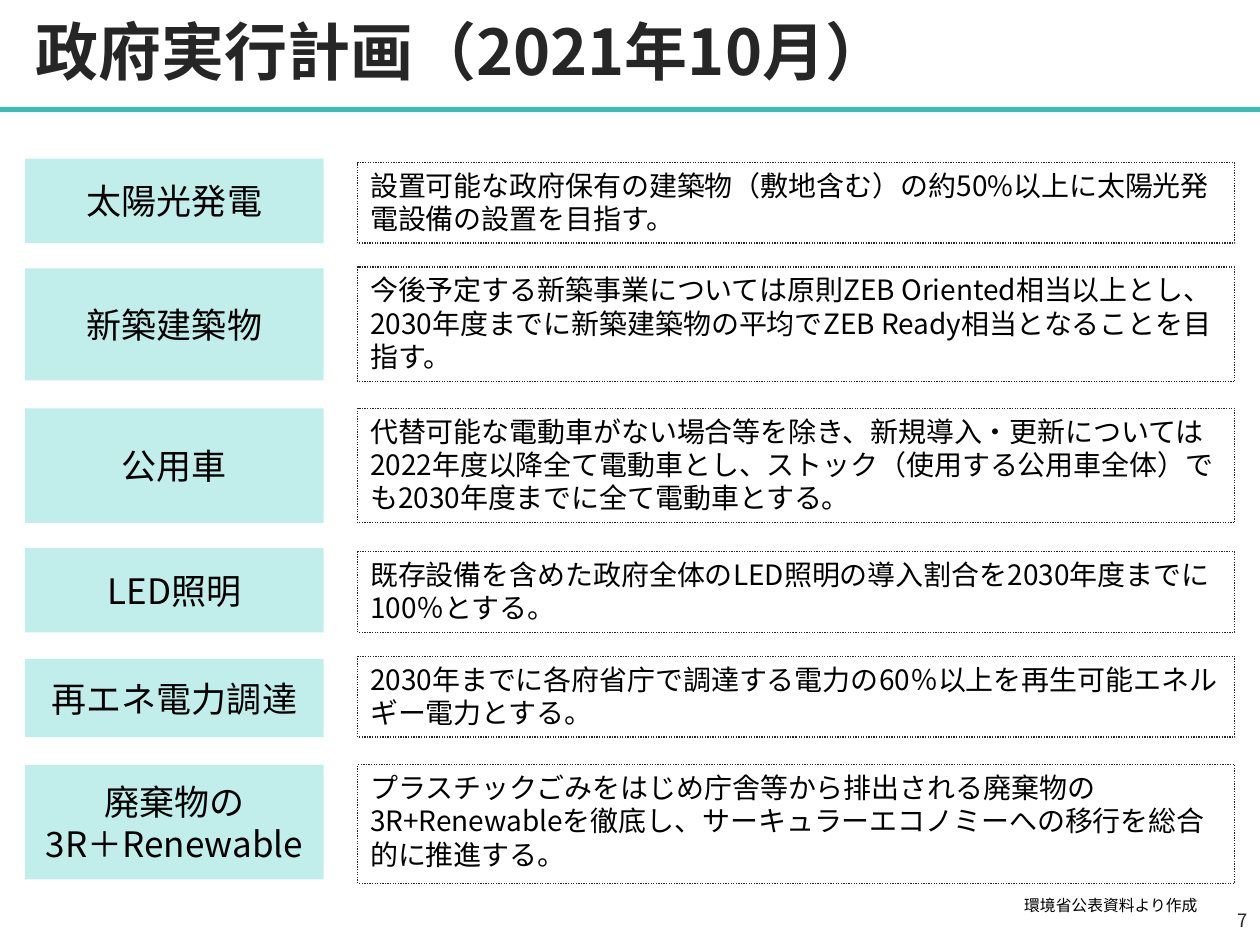
from lxml.etree import SubElement
from pptx import Presentation
from pptx.dml.color import RGBColor
from pptx.enum.dml import MSO_LINE
from pptx.enum.shapes import MSO_CONNECTOR, MSO_SHAPE
from pptx.enum.text import MSO_ANCHOR, MSO_AUTO_SIZE, PP_ALIGN
from pptx.oxml.ns import qn
from pptx.util import Emu, Pt

EMU_PER_PX = 9144
FONT = "Noto Sans CJK JP"
COLORS = {"teal": "37BFB9", "pale": "C1EDEB", "dark": "262626", "black": "000000"}
LABEL_LEFT, LABEL_WIDTH = 20, 237
TARGET_LEFT, TARGET_WIDTH = 284, 696

# label, its top and height, target, its top and height
MEASURES = [
    ("太陽光発電", 126, 67,
     "設置可能な政府保有の建築物（敷地含む）の約50%以上に太陽光発電設備の設置を目指す。", 129, 64),
    ("新築建築物", 213, 89,
     "今後予定する新築事業については原則ZEB Oriented相当以上とし、2030年度までに"
     "新築建築物の平均でZEB Ready相当となることを目指す。", 212, 91),
    ("公用車", 324, 91,
     "代替可能な電動車がない場合等を除き、新規導入・更新については2022年度以降全て電動車とし、"
     "ストック（使用する公用車全体）でも2030年度までに全て電動車とする。", 324, 91),
    ("LED照明", 435, 67,
     "既存設備を含めた政府全体のLED照明の導入割合を2030年度までに100％とする。", 438, 64),
    ("再エネ電力調達", 523, 62,
     "2030年までに各府省庁で調達する電力の60％以上を再生可能エネルギー電力とする。", 521, 64),
    ("廃棄物の\n3R＋Renewable", 607, 91,
     "プラスチックごみをはじめ庁舎等から排出される廃棄物の3R+Renewableを徹底し、"
     "サーキュラーエコノミーへの移行を総合的に推進する。", 607, 94),
]


def px(length):
    """Turn px into EMU."""
    return Emu(length * EMU_PER_PX)


def color(name):
    """Look up a palette colour."""
    return RGBColor.from_string(COLORS[name])


def write(shape, text, size, ink="black", align=PP_ALIGN.LEFT,
          anchor=MSO_ANCHOR.MIDDLE, spacing=None, before=0, bold=False):
    """Set and format the text of a shape."""
    frame = shape.text_frame
    frame.text = text
    frame.word_wrap = True
    frame.auto_size = MSO_AUTO_SIZE.NONE
    frame.vertical_anchor = anchor
    for paragraph in frame.paragraphs:
        paragraph.alignment = align
        paragraph.space_before = Pt(before)
        paragraph.line_spacing = spacing
        for run in paragraph.runs:
            run.font.name = FONT
            run.font.size = Pt(size)
            run.font.bold = bold
            run.font.color.rgb = color(ink)
            SubElement(run.font._element, qn("a:ea"), typeface=FONT)


def add_title(slide, text):
    """Place the title and the rule below it."""
    title = slide.shapes.title
    title.left, title.top, title.width, title.height = map(px, (18, 0, 962, 87))
    write(title, text, 36, "dark", spacing=0.9, bold=True)
    rule = slide.shapes.add_connector(MSO_CONNECTOR.STRAIGHT, px(0), px(87), px(1000), px(87))
    rule.line.color.rgb = color("teal")
    rule.line.width = Pt(3)
    SubElement(rule._element.spPr, qn("a:effectLst"))


def add_box(slide, *bounds):
    """Add a rectangle without a shadow."""
    box = slide.shapes.add_shape(MSO_SHAPE.RECTANGLE, *map(px, bounds))
    box.shadow.inherit = False
    return box


def add_label(slide, text, top, height):
    """Add the filled name of a measure."""
    label = add_box(slide, LABEL_LEFT, top, LABEL_WIDTH, height)
    label.fill.solid()
    label.fill.fore_color.rgb = color("pale")
    label.line.fill.background()
    write(label, text, 20, align=PP_ALIGN.CENTER, spacing=Pt(24))


def add_target(slide, text, top, height):
    """Add the dotted box with the target of a measure."""
    target = add_box(slide, TARGET_LEFT, top, TARGET_WIDTH, height)
    target.fill.background()
    target.line.color.rgb = color("dark")
    target.line.width = Pt(0.75)
    target.line.dash_style = MSO_LINE.ROUND_DOT
    write(target, text, 16, anchor=MSO_ANCHOR.TOP, spacing=Pt(19), before=2)


def add_note(slide, text, bounds, size, ink, anchor):
    """Add a small right-aligned text."""
    note = slide.shapes.add_textbox(*map(px, bounds))
    write(note, text, size, ink, PP_ALIGN.RIGHT, anchor)


def main():
    """Build the slide and save it."""
    deck = Presentation()
    deck.slide_width, deck.slide_height = px(1000), px(750)
    slide = deck.slides.add_slide(deck.slide_layouts[5])
    add_title(slide, "政府実行計画（2021年10月）")
    for label, label_top, label_height, target, target_top, target_height in MEASURES:
        add_label(slide, label, label_top, label_height)
        add_target(slide, target, target_top, target_height)
    add_note(slide, "環境省公表資料より作成", (500, 706, 460, 25), 9, "black", MSO_ANCHOR.TOP)
    add_note(slide, "7", (775, 710, 225, 40), 10.5, "dark", MSO_ANCHOR.MIDDLE)
    deck.save("out.pptx")


if __name__ == "__main__":
    main()
